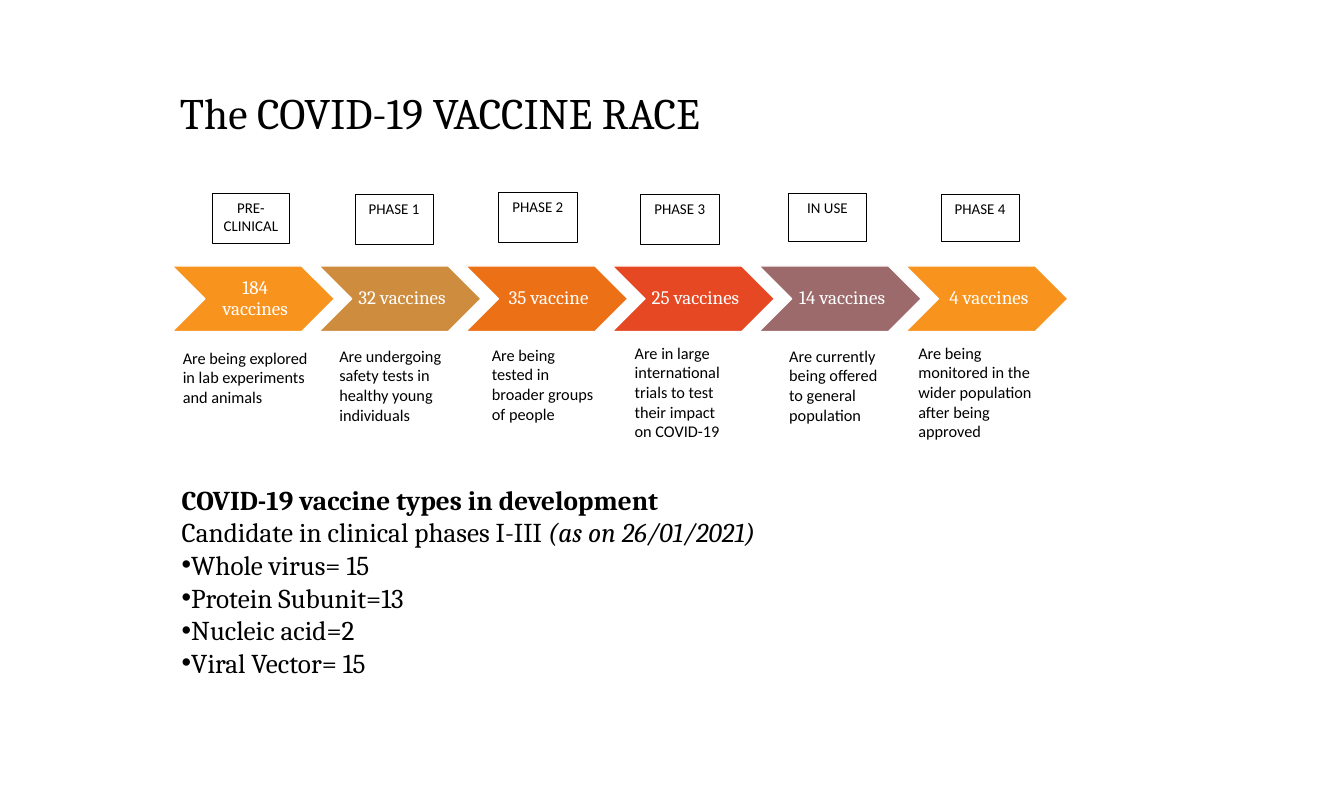
from dataclasses import dataclass

from lxml.etree import SubElement
from pptx import Presentation
from pptx.dml.color import RGBColor
from pptx.enum.shapes import MSO_SHAPE
from pptx.enum.text import MSO_ANCHOR, MSO_AUTO_SIZE, PP_ALIGN
from pptx.oxml.ns import qn
from pptx.util import Emu, Pt

PX = 9144  # 100 px to the inch


@dataclass(frozen=True)
class Theme:
    serif: str = "Cambria"
    sans: str = "Calibri"
    ink: str = "000000"
    paper: str = "FFFFFF"
    title_size: int = 32
    body_size: int = 20
    count_size: int = 14
    detail_size: int = 12
    label_size: int = 11


@dataclass(frozen=True)
class Box:
    left: int
    top: int
    width: int
    height: int

    def emu(self) -> list[Emu]:
        return [Emu(side * PX) for side in (self.left, self.top, self.width, self.height)]


@dataclass(frozen=True)
class Stage:
    label: str
    label_box: Box
    count: str
    color: str
    detail: str
    detail_box: Box


@dataclass(frozen=True)
class Line:
    text: str
    bold: bool = False
    italic_tail: str = ""
    bullet: bool = False


THEME = Theme()
TITLE_BOX = Box(174, 85, 639, 60)
TYPES_BOX = Box(176, 488, 790, 212)
CHEVRON = Box(176, 272, 166, 67)
CHEVRON_PITCH = 150
CHEVRON_INSETS = (6, 2, 2, 2)

STAGES = [
    Stage("PRE- CLINICAL", Box(217, 198, 79, 51), "184 vaccines", "F8931D",
          "Are being explored in lab experiments and animals", Box(177, 351, 158, 59)),
    Stage("PHASE 1", Box(363, 199, 80, 51), "32 vaccines", "CE8D3E",
          "Are undergoing safety tests in healthy young individuals", Box(337, 349, 128, 93)),
    Stage("PHASE 2", Box(510, 197, 80, 51), "35 vaccine", "EC7016",
          "Are being tested in broader groups of people", Box(493, 348, 127, 82)),
    Stage("PHASE 3", Box(655, 199, 80, 51), "25 vaccines", "E64823",
          "Are in large international trials to test their impact on COVID-19",
          Box(639, 346, 120, 104)),
    Stage("IN USE", Box(806, 198, 80, 49), "14 vaccines", "9C6A6A",
          "Are currently being offered to general population", Box(797, 349, 117, 104)),
    Stage("PHASE 4", Box(962, 199, 80, 48), "4 vaccines", "F8931D",
          "Are being monitored in the wider population after being approved",
          Box(929, 346, 147, 104)),
]

VACCINE_TYPES = [
    Line("COVID-19 vaccine types in development", bold=True),
    Line("Candidate in clinical phases I-III ", italic_tail="(as on 26/01/2021)"),
    Line("Whole virus= 15", bullet=True),
    Line("Protein Subunit=13", bullet=True),
    Line("Nucleic acid=2", bullet=True),
    Line("Viral Vector= 15", bullet=True),
]


def style_span(span, font: str, size: int, color: str) -> None:
    span.font.name = font
    span.font.size = Pt(size)
    span.font.color.rgb = RGBColor.from_string(color)


def write(frame, text: str, font: str, size: int, color: str,
          align=PP_ALIGN.LEFT, anchor=MSO_ANCHOR.TOP) -> None:
    frame.text = text
    frame.word_wrap = True
    frame.auto_size = MSO_AUTO_SIZE.NONE
    frame.vertical_anchor = anchor
    para = frame.paragraphs[0]
    para.alignment = align
    style_span(para.runs[0], font, size, color)


def add_shape(page, kind, box: Box, fill: str, line: str, line_width: float):
    shape = page.shapes.add_shape(kind, *box.emu())
    shape.shadow.inherit = False
    shape.fill.solid()
    shape.fill.fore_color.rgb = RGBColor.from_string(fill)
    shape.line.color.rgb = RGBColor.from_string(line)
    shape.line.width = Pt(line_width)
    return shape


def add_title(page) -> None:
    title = page.shapes.title
    title.left, title.top, title.width, title.height = TITLE_BOX.emu()
    write(title.text_frame, "The COVID-19 VACCINE RACE", THEME.serif, THEME.title_size,
          THEME.ink, anchor=MSO_ANCHOR.MIDDLE)


def add_stage(page, index: int, stage: Stage) -> None:
    # Chevron with the number of vaccines
    place = Box(CHEVRON.left + index * CHEVRON_PITCH, CHEVRON.top, CHEVRON.width, CHEVRON.height)
    chevron = add_shape(page, MSO_SHAPE.CHEVRON, place, stage.color, THEME.paper, 1)
    frame = chevron.text_frame
    write(frame, stage.count, THEME.serif, THEME.count_size, THEME.paper,
          PP_ALIGN.CENTER, MSO_ANCHOR.MIDDLE)
    frame.paragraphs[0].line_spacing = 0.9
    frame.margin_left, frame.margin_top, frame.margin_right, frame.margin_bottom = [
        Emu(inset * PX) for inset in CHEVRON_INSETS]

    # Phase label above
    label = add_shape(page, MSO_SHAPE.RECTANGLE, stage.label_box, THEME.paper, THEME.ink, 0.5)
    write(label.text_frame, stage.label, THEME.sans, THEME.label_size, THEME.ink,
          PP_ALIGN.CENTER)

    # Explanation below
    detail = page.shapes.add_textbox(*stage.detail_box.emu())
    write(detail.text_frame, stage.detail, THEME.sans, THEME.detail_size, THEME.ink)


def add_bullet(para) -> None:
    properties = para._p.get_or_add_pPr()
    properties.set("marL", "0")
    properties.set("indent", "0")
    SubElement(properties, qn("a:buFont")).set("typeface", "Arial")
    SubElement(properties, qn("a:buChar")).set("char", "•")


def add_vaccine_types(page) -> None:
    frame = page.shapes.add_textbox(*TYPES_BOX.emu()).text_frame
    frame.word_wrap = True
    frame.vertical_anchor = MSO_ANCHOR.MIDDLE
    frame.text = "\n".join(line.text for line in VACCINE_TYPES)
    for para, line in zip(frame.paragraphs, VACCINE_TYPES):
        if line.bullet:
            add_bullet(para)
        para.runs[0].font.bold = line.bold
        if line.italic_tail:
            tail = para.add_run()
            tail.text = line.italic_tail
            tail.font.italic = True
        for span in para.runs:
            style_span(span, THEME.serif, THEME.body_size, THEME.ink)


def main() -> None:
    deck = Presentation()
    deck.slide_width, deck.slide_height = Emu(1374 * PX), Emu(818 * PX)
    page = deck.slides.add_slide(deck.slide_layouts[5])
    add_title(page)
    for index, stage in enumerate(STAGES):
        add_stage(page, index, stage)
    add_vaccine_types(page)
    deck.save("out.pptx")


if __name__ == "__main__":
    main()
